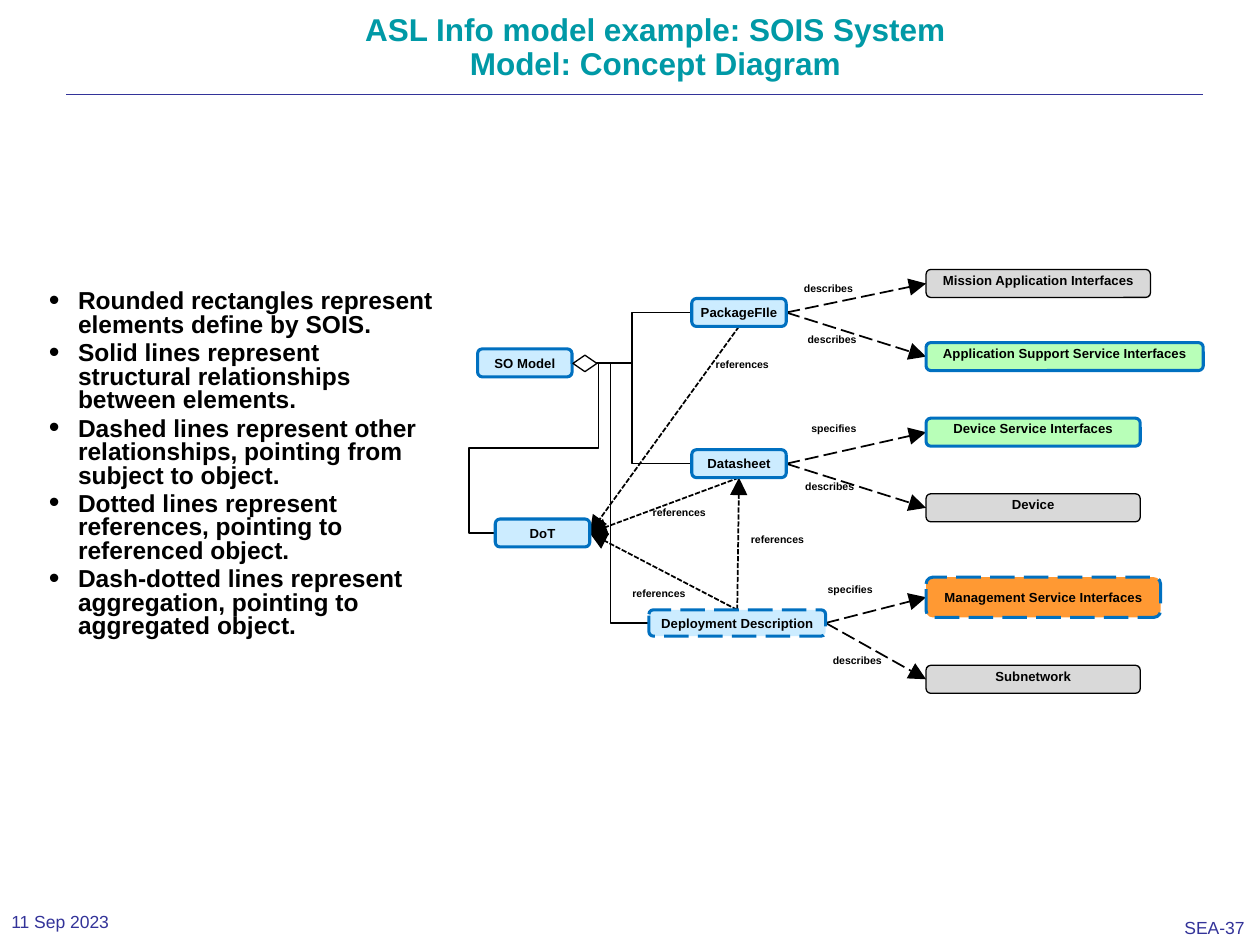
from dataclasses import dataclass

from lxml import etree
from pptx import Presentation
from pptx.dml.color import RGBColor
from pptx.enum import dml, shapes, text
from pptx.oxml import ns
from pptx.util import Pt


@dataclass(frozen=True)
class Theme:
    font: str = "Arial"
    teal: str = "0099A6"
    navy: str = "333399"
    black: str = "000000"
    white: str = "FFFFFF"
    blue: str = "0070C0"
    sky: str = "CCECFF"
    green: str = "B8FFB8"
    grey: str = "D9D9D9"
    orange: str = "FF9933"
    title: float = 18
    body: float = 14
    footer: float = 10
    node: float = 7.5
    label: float = 6


T = Theme()
TOP, LEFT, BOTTOM, RIGHT = range(4)
LONG, DOTTED = dml.MSO_LINE.LONG_DASH, dml.MSO_LINE.SQUARE_DOT
NODE_H = 16
TARGET_X = 261.2

BULLETS = [
    "Rounded rectangles represent elements define by SOIS.",
    "Solid lines represent structural relationships between elements.",
    "Dashed lines represent other relationships, pointing from subject to object.",
    "Dotted lines represent references, pointing to referenced object.",
    "Dash-dotted lines represent aggregation, pointing to aggregated object.",
]

# SOIS elements: name, x, y, width, height, dash
ELEMENTS = [
    ("PackageFIle", 127.3, 16.6, 54, NODE_H, None),
    ("SO Model", 4.9, 45.4, 54, NODE_H, None),
    ("DoT", 15, 142.6, 54, NODE_H, None),
    ("Datasheet", 127.3, 103, 54, NODE_H, None),
    ("Deployment Description", 102.8, 194.5, 101, 15, LONG),
]
# Described things: name, y, width, height, fill, outline, dash
TARGETS = [
    ("Mission Application Interfaces", 0, 128.2, NODE_H, T.grey, T.black, None),
    ("Application Support Service Interfaces", 41.8, 158.4, NODE_H, T.green, T.blue, None),
    ("Device Service Interfaces", 85, 122.4, NODE_H, T.green, T.blue, None),
    ("Device", 128.2, 122.4, NODE_H, T.grey, T.black, None),
    ("Management Service Interfaces", 175.8, 134, 23, T.orange, T.blue, LONG),
    ("Subnetwork", 226.2, 122.4, NODE_H, T.grey, T.black, None),
]
# Each of these elements points at two targets
DESCRIBERS = ["PackageFIle", "Datasheet", "Deployment Description"]
REFERENCES = [
    ("Datasheet", BOTTOM, "DoT", RIGHT),
    ("Deployment Description", TOP, "DoT", RIGHT),
    ("Deployment Description", TOP, "Datasheet", BOTTOM),
    ("PackageFIle", BOTTOM, "DoT", RIGHT),
]
LABELS = {
    "describes": [(191.4, 7.3), (193.5, 36.1), (192.1, 120.3), (207.9, 219.7)],
    "specifies": [(195.7, 87.2), (205, 179.4)],
    "references": [(141, 50.5), (105, 135.4), (161.1, 150.6), (93.4, 181.5)],
}


def rgb(color):
    return RGBColor.from_string(color)


def sub(parent, tag, **attrs):
    return etree.SubElement(parent, ns.qn(tag), attrs)


def style(p, size, color, bold=False, align=None):
    p.alignment = align
    p.font.name, p.font.size, p.font.bold = T.font, Pt(size), bold
    p.font.color.rgb = rgb(color)


def set_frame(tf, inset=(7.2, 3.6), anchor=text.MSO_ANCHOR.TOP):
    tf.word_wrap = True
    tf.margin_left = tf.margin_right = Pt(inset[0])
    tf.margin_top = tf.margin_bottom = Pt(inset[1])
    tf.vertical_anchor = anchor


def add_text(s, box, words, size, color, bold=False, align=None, **frame):
    tf = s.shapes.add_textbox(*map(Pt, box)).text_frame
    set_frame(tf, **frame)
    p = tf.paragraphs[0]
    p.text = words
    style(p, size, color, bold, align)
    return p


def add_line(s, start, end, color, width, dash=None, kind=shapes.MSO_CONNECTOR.STRAIGHT):
    line = s.shapes.add_connector(kind, *map(Pt, (*start, *end)))
    line.line.color.rgb = rgb(color)
    line.line.width = Pt(width)
    if dash:
        line.line.dash_style = dash
    sub(line._element.spPr, "a:effectLst")
    return line


def add_outline_shape(s, kind, box, fill, outline, width):
    sp = s.shapes.add_shape(kind, *map(Pt, box))
    sp.shadow.inherit = False
    sp.fill.solid()
    sp.fill.fore_color.rgb = rgb(fill)
    sp.line.color.rgb = rgb(outline)
    sp.line.width = Pt(width)
    return sp


def add_node(s, box, name, fill, outline, dash, anchor):
    width = 1.75 if outline == T.blue else 0.75
    sp = add_outline_shape(s, shapes.MSO_SHAPE.ROUNDED_RECTANGLE, box, fill, outline, width)
    if dash:
        sp.line.dash_style = dash
    set_frame(sp.text_frame, (0.72, 0.72), anchor)
    p = sp.text_frame.paragraphs[0]
    p.text = name
    style(p, T.node, T.black, True, text.PP_ALIGN.CENTER)
    return sp


def send_back(s, sp):
    s.shapes._spTree.insert(2, sp._element)


def add_arrow(s, source, source_side, target, target_side, dash):
    line = add_line(s, (0, 0), (0, 0), T.black, 1, dash)
    line.begin_connect(source, source_side)
    line.end_connect(target, target_side)
    sub(line.line._get_or_add_ln(), "a:tailEnd", type="triangle", w="lg", len="lg")
    send_back(s, line)


def side_point(sp, side):
    x = sp.left + (sp.width if side == RIGHT else 0)
    return x / Pt(1), (sp.top + sp.height / 2) / Pt(1)


def add_elbow(s, part, whole, adjust=()):
    line = add_line(s, side_point(part, LEFT), side_point(whole, RIGHT), T.black, 0.75,
                    kind=shapes.MSO_CONNECTOR.ELBOW)
    if adjust:
        geom = line._element.spPr.find(ns.qn("a:prstGeom"))
        geom.set("prst", f"bentConnector{len(adjust) + 2}")
        guides = geom.find(ns.qn("a:avLst"))
        for i, value in enumerate(adjust, 1):
            sub(guides, "a:gd", name=f"adj{i}", fmla=f"val {value}")
    send_back(s, line)


def build_header(s, x, y, w, h):
    p = add_text(s, (x + 142, y, 389, h - 3.6),
                 "ASL Info model example: SOIS System Model: Concept Diagram",
                 T.title, T.teal, True, text.PP_ALIGN.CENTER, anchor=text.MSO_ANCHOR.BOTTOM)
    p.line_spacing = 0.9
    add_line(s, (x, y + h), (x + w, y + h), T.navy, 0.13)


def build_bullets(s, x, y, w, h):
    tf = s.shapes.add_textbox(*map(Pt, (x, y, w, h))).text_frame
    set_frame(tf)
    for i, words in enumerate(BULLETS):
        p = tf.add_paragraph() if i else tf.paragraphs[0]
        p.text = words
        pPr = p._p.get_or_add_pPr()
        pPr.set("marL", str(Pt(16.6)))
        pPr.set("indent", str(-Pt(16.6)))
        sub(pPr, "a:buSzPct", val="125000")
        sub(pPr, "a:buFont", typeface=T.font)
        sub(pPr, "a:buChar", char="•")
        style(p, T.body, T.black, True)
        p.line_spacing = 0.8
        p.space_before = Pt(1.4 if i else 0)
        p.space_after = Pt(1.4)


def build_diagram(s, x, y):
    # Nodes
    nodes = {}
    for name, dx, dy, w, h, dash in ELEMENTS:
        nodes[name] = add_node(s, (x + dx, y + dy, w, h), name, T.sky, T.blue, dash,
                               text.MSO_ANCHOR.MIDDLE)
    for name, dy, w, h, fill, outline, dash in TARGETS:
        anchor = text.MSO_ANCHOR.MIDDLE if h > NODE_H else text.MSO_ANCHOR.TOP
        nodes[name] = add_node(s, (x + TARGET_X, y + dy, w, h), name, fill, outline, dash, anchor)

    # Dashed and dotted arrows
    for i, target in enumerate(TARGETS):
        add_arrow(s, nodes[DESCRIBERS[i // 2]], RIGHT, nodes[target[0]], LEFT, LONG)
    for source, source_side, target, target_side in REFERENCES:
        add_arrow(s, nodes[source], source_side, nodes[target], target_side, DOTTED)

    # Structure lines gathered at the diamond
    model = nodes["SO Model"]
    for name in DESCRIBERS:
        add_elbow(s, nodes[name], model)
    add_elbow(s, nodes["DoT"], model, (-34300, 50000, 134300))
    dx, dy = side_point(model, RIGHT)
    add_outline_shape(s, shapes.MSO_SHAPE.FLOWCHART_DECISION, (dx + 0.5, dy - 4.4, 13.7, 9.4),
                      T.white, T.black, 0.75)

    # Arrow labels
    for words, places in LABELS.items():
        for dx, dy in places:
            add_text(s, (x + dx, y + dy, 36, 9.4), words, T.label, T.black, True, inset=(0, 0))


def build_footer(s, x, y, w):
    add_text(s, (x, y, 136, 21), "11 Sep 2023", T.footer, T.navy,
             inset=(6.5, 3.6), anchor=text.MSO_ANCHOR.MIDDLE)
    add_text(s, (x + w - 49.7, y + 5, 49, 18.7), "SEA-37", T.footer, T.navy, inset=(6.5, 2.9))


def main():
    prs = Presentation()
    prs.slide_width, prs.slide_height = Pt(720), Pt(540)
    s = prs.slides.add_slide(prs.slide_layouts[6])
    build_header(s, 38, 0, 649.5, 54)
    build_bullets(s, 20.9, 162.7, 237, 281.5)
    build_diagram(s, 268, 154)
    build_footer(s, 0, 516.2, 720)
    prs.save("out.pptx")


if __name__ == "__main__":
    main()
